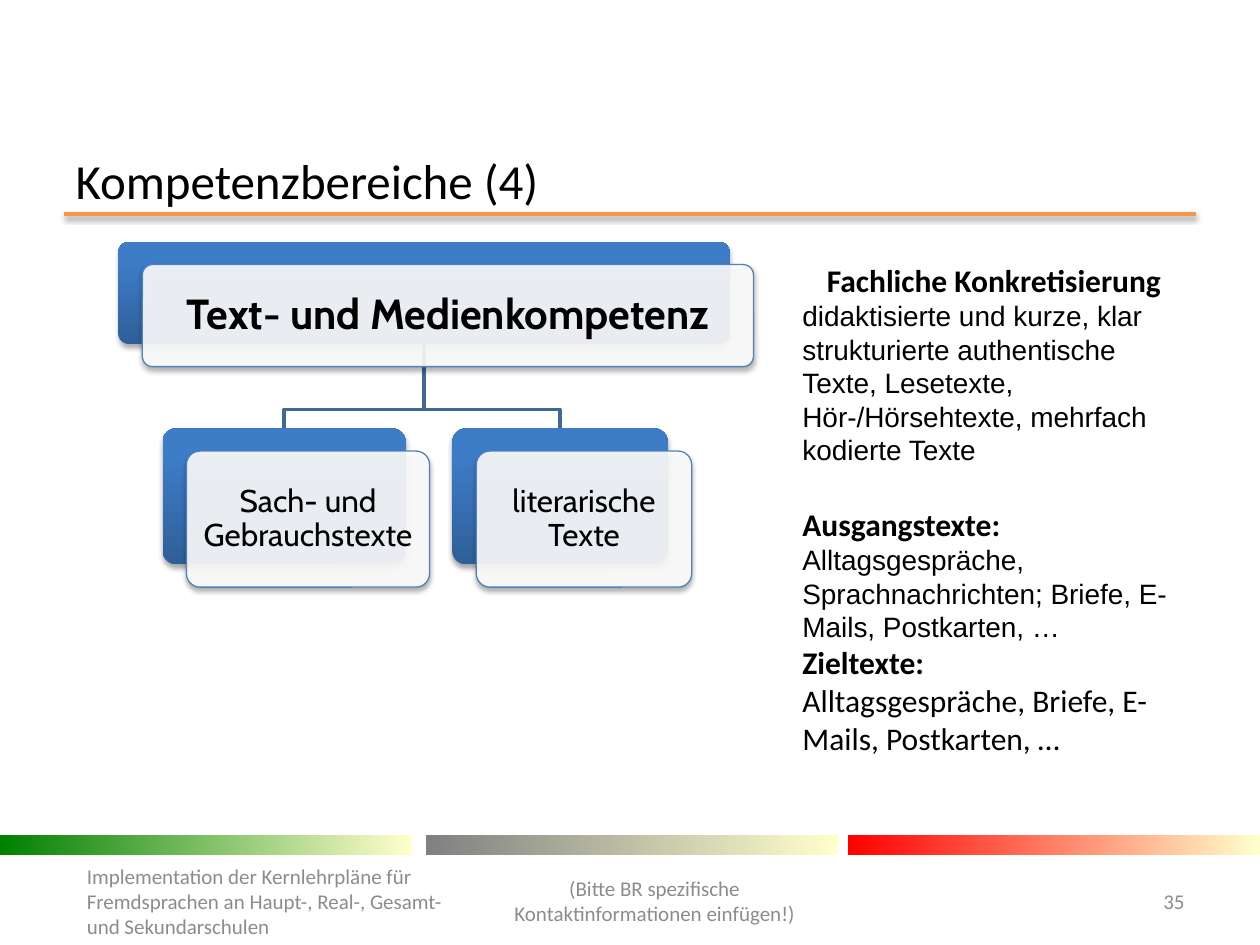
from typing import NamedTuple

from lxml import etree
from pptx import Presentation
from pptx.dml.color import RGBColor
from pptx.enum import shapes, text
from pptx.oxml import ns
from pptx.util import Inches, Pt

BLACK = RGBColor(0x00, 0x00, 0x00)
WHITE = RGBColor(0xFF, 0xFF, 0xFF)
GREY = RGBColor(0x8C, 0x8C, 0x8C)
ORANGE = RGBColor(0xF7, 0x96, 0x46)
CREAM = RGBColor(0xFF, 0xFF, 0xCC)
GREEN = RGBColor(0x00, 0x80, 0x00)
MID = RGBColor(0x80, 0x80, 0x80)
RED = RGBColor(0xFF, 0x00, 0x00)
DEEP = RGBColor(0x2F, 0x5F, 0x99)
BLUE = RGBColor(0x3D, 0x7C, 0xC7)
EDGE = RGBColor(0x4F, 0x81, 0xBD)
LINK = RGBColor(0x3F, 0x67, 0x97)

LEFT, MIDDLE, RIGHT = text.PP_ALIGN.LEFT, text.PP_ALIGN.CENTER, text.PP_ALIGN.RIGHT
SHIFT_X, SHIFT_Y = 0.19, 0.18


class Card(NamedTuple):
    label: str
    left: float
    top: float
    width: float
    height: float
    size: int
    bold: bool = False

    @property
    def center(self) -> float:
        return self.left + self.width / 2


class Bar(NamedTuple):
    left: float
    color: RGBColor


class Note(NamedTuple):
    label: str
    left: float
    top: float
    width: float
    height: float
    align: text.PP_ALIGN


class Para(NamedTuple):
    runs: list  # (label, size, font name, bold)
    align: text.PP_ALIGN = LEFT
    before: int = 0


PARENT = Card("Text- und Medienkompetenz", 0.94, 1.92, 4.85, 0.81, 24, True)
KIDS = [
    Card("Sach- und Gebrauchstexte", 1.29, 3.4, 1.93, 1.08, 18),
    Card("literarische Texte", 3.59, 3.4, 1.71, 1.08, 18),
]
BARS = [Bar(0, GREEN), Bar(3.38, MID), Bar(6.73, RED)]
NOTES = [
    Note("35", 8.86, 6.95, 0.64, 0.4, RIGHT),
    Note("Implementation der Kernlehrpläne für Fremdsprachen an Haupt-, Real-, "
         "Gesamt- und Sekundarschulen", 0.59, 6.81, 3.15, 0.68, LEFT),
    Note("(Bitte BR spezifische Kontaktinformationen einfügen!)",
         3.74, 6.79, 2.91, 0.71, MIDDLE),
]
DETAILS = [
    Para([("Fachliche Konkretisierung", 18, "Calibri", True)], MIDDLE),
    Para([("didaktisierte und kurze, klar strukturierte authentische Texte, "
           "Lesetexte, Hör-/Hörsehtexte, mehrfach kodierte Texte", 16, "Arial", False)]),
    Para([("Ausgangstexte: ", 18, "Calibri", True),
          ("Alltagsgespräche, Sprachnachrichten; Briefe, E-Mails, Postkarten, …",
           16, "Arial", False)], before=22),
    Para([("Zieltexte:", 18, "Calibri", True)]),
    Para([("Alltagsgespräche, Briefe, E-Mails, Postkarten, …", 18, "Calibri", False)]),
]


def style(font, name: str, size: int, color: RGBColor, bold: bool = False) -> None:
    font.name, font.size, font.bold = name, Pt(size), bold
    font.color.rgb = color


def cast(shape, alpha: int = 35, dist: float = 1.8) -> None:
    """Add a soft shadow below; call it after fill and line are set."""
    effects = etree.SubElement(shape._element.spPr, ns.qn("a:effectLst"))
    shade = etree.SubElement(effects, ns.qn("a:outerShdw"), blurRad=str(Pt(3.1)),
                             dist=str(Pt(dist)), dir="5400000", rotWithShape="0")
    color = etree.SubElement(shade, ns.qn("a:srgbClr"), val=str(BLACK))
    etree.SubElement(color, ns.qn("a:alpha"), val=str(alpha * 1000))


def blend(fill, start: RGBColor, end: RGBColor, angle: int, stop: float = 1) -> None:
    fill.gradient()
    fill.gradient_angle = angle
    first, last = fill.gradient_stops
    first.color.rgb, first.position = start, 0
    last.color.rgb, last.position = end, stop


def draw_bar(slide, bar: Bar) -> None:
    shape = slide.shapes.add_shape(shapes.MSO_SHAPE.RECTANGLE, Inches(bar.left),
                                   Inches(6.63), Inches(3.27), Inches(0.16))
    shape.shadow.inherit = False
    shape.line.fill.background()
    blend(shape.fill, bar.color, CREAM, 0)


def draw_rule(slide) -> None:
    rule = slide.shapes.add_connector(shapes.MSO_CONNECTOR.STRAIGHT, Inches(0.51),
                                      Inches(1.7), Inches(9.49), Inches(1.7))
    rule.line.color.rgb, rule.line.width = ORANGE, Pt(2)
    cast(rule, 38, 1.6)


def draw_link(slide, top: Card, kid: Card) -> None:
    bend = 3.25
    points = [(top.center, bend), (kid.center, bend), (kid.center, kid.top)]
    path = slide.shapes.build_freeform(Inches(top.center), Inches(top.top + top.height))
    path.add_line_segments([(Inches(x), Inches(y)) for x, y in points], close=False)
    link = path.convert_to_shape()
    link.shadow.inherit = False
    link.fill.background()
    link.line.color.rgb, link.line.width = LINK, Pt(2)


def add_round(slide, card: Card, x: float = 0, y: float = 0):
    shape = slide.shapes.add_shape(
        shapes.MSO_SHAPE.ROUNDED_RECTANGLE, Inches(card.left + x),
        Inches(card.top + y), Inches(card.width), Inches(card.height))
    shape.adjustments[0] = 0.1
    return shape


def draw_card(slide, card: Card) -> None:
    back = add_round(slide, card)
    blend(back.fill, DEEP, BLUE, 90, 0.8)
    back.line.fill.background()
    cast(back)

    front = add_round(slide, card, SHIFT_X, SHIFT_Y)
    front.fill.solid()
    front.fill.fore_color.rgb = WHITE
    color = front._element.spPr.find(".//" + ns.qn("a:srgbClr"))
    etree.SubElement(color, ns.qn("a:alpha"), val="90000")
    front.line.color.rgb, front.line.width = EDGE, Pt(0.75)
    cast(front)

    frame = front.text_frame
    frame.word_wrap = True
    frame.vertical_anchor = text.MSO_ANCHOR.MIDDLE
    frame.margin_left = frame.margin_right = Inches(0.1)
    frame.margin_top = frame.margin_bottom = Inches(0.1)
    para = frame.paragraphs[0]
    para.text, para.alignment, para.line_spacing = card.label, MIDDLE, 0.9
    style(para.font, "Cabin", card.size, BLACK, card.bold)


def add_frame(slide, left: float, top: float, width: float, height: float):
    box = slide.shapes.add_textbox(Inches(left), Inches(top), Inches(width), Inches(height))
    box.text_frame.word_wrap = True
    return box.text_frame


def draw_note(slide, note: Note) -> None:
    frame = add_frame(slide, *note[1:5])
    frame.vertical_anchor = text.MSO_ANCHOR.MIDDLE
    para = frame.paragraphs[0]
    para.text, para.alignment = note.label, note.align
    style(para.font, "Calibri", 12, GREY)


def draw_details(slide) -> None:
    frame = add_frame(slide, 6.27, 2.02, 3.24, 4.64)
    for i, item in enumerate(DETAILS):
        para = frame.add_paragraph() if i else frame.paragraphs[0]
        para.alignment = item.align
        if item.before:
            para.space_before = Pt(item.before)
        for label, size, name, bold in item.runs:
            run = para.add_run()
            run.text = label
            if len(item.runs) > 1:
                style(run.font, name, size, BLACK, bold)
            else:
                style(para.font, name, size, BLACK, bold)


def draw_title(slide) -> None:
    title = slide.shapes.title
    title.left, title.top = Inches(0.5), Inches(1.23)
    title.width, title.height = Inches(9), Inches(0.39)
    frame = title.text_frame
    frame.auto_size = text.MSO_AUTO_SIZE.NONE
    frame.vertical_anchor = text.MSO_ANCHOR.MIDDLE
    para = frame.paragraphs[0]
    para.text, para.alignment = "Kompetenzbereiche (4)", LEFT
    style(para.font, "Calibri", 28, BLACK)


def main() -> None:
    deck = Presentation()
    deck.slide_width, deck.slide_height = Inches(10), Inches(7.5)
    slide = deck.slides.add_slide(deck.slide_layouts[5])
    draw_rule(slide)
    for bar in BARS:
        draw_bar(slide, bar)
    draw_title(slide)
    for kid in reversed(KIDS):
        draw_link(slide, PARENT, kid)
    for card in [PARENT, *KIDS]:
        draw_card(slide, card)
    draw_details(slide)
    for note in NOTES:
        draw_note(slide, note)
    deck.save("out.pptx")


if __name__ == "__main__":
    main()
